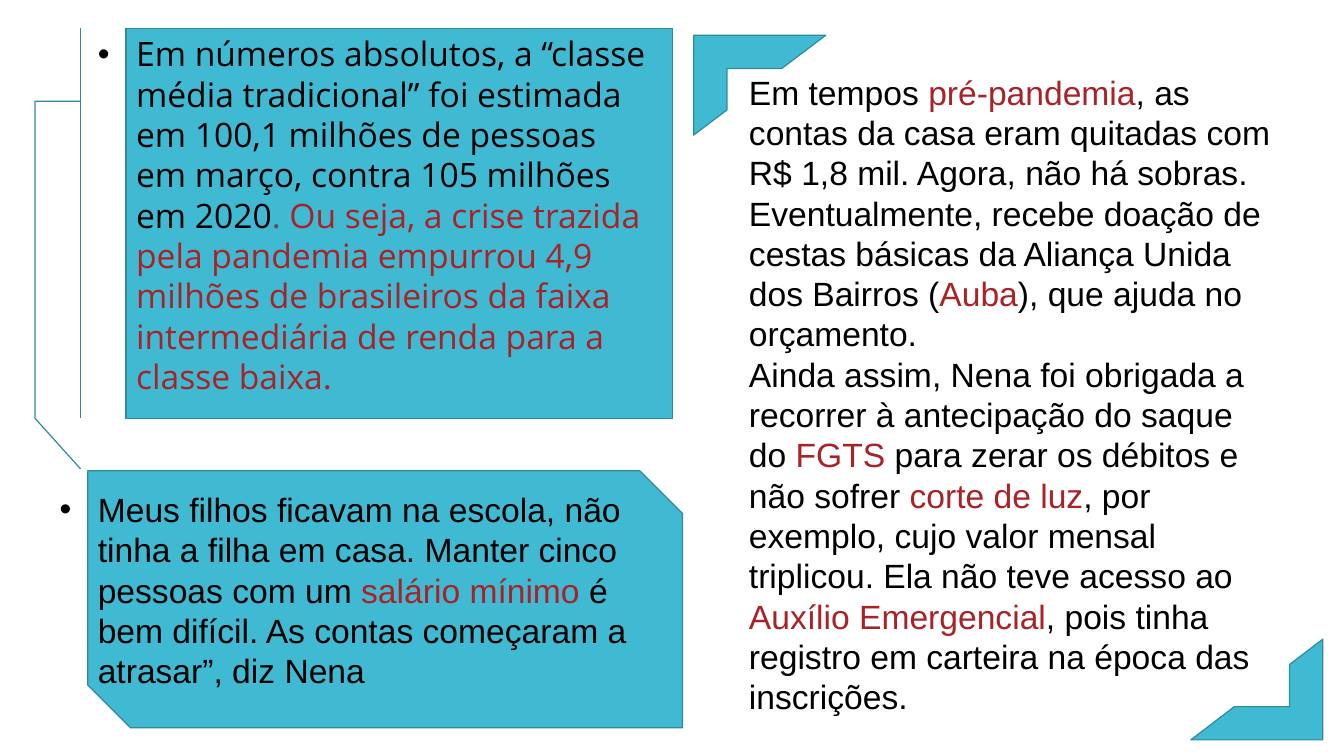
from lxml import etree
from pptx import Presentation
from pptx.dml.color import RGBColor
from pptx.enum.shapes import MSO_SHAPE
from pptx.enum.text import MSO_ANCHOR, MSO_AUTO_SIZE, PP_ALIGN
from pptx.oxml.ns import qn
from pptx.util import Inches, Pt

CALLOUT = MSO_SHAPE.LINE_CALLOUT_3_BORDER_AND_ACCENT_BAR
SNIPPED = MSO_SHAPE.SNIP_2_DIAG_RECTANGLE
HALF_FRAME = MSO_SHAPE.HALF_FRAME
TOP = MSO_ANCHOR.TOP
FIT_SHAPE = MSO_AUTO_SIZE.SHAPE_TO_FIT_TEXT
LEFT = PP_ALIGN.LEFT

TEAL, TEAL_DARK = "40BAD2", "2F8A9B"
BLACK, GRAY, RED = "000000", "555555", "A72327"
TWO_CONTENT_LAYOUT = 3
BULLET_INDENT = 0.38

MIDDLE_CLASS = [[
    ("Em números absolutos, a “classe média tradicional” foi estimada em 100,1 "
     "milhões de pessoas em março, contra 105 milhões em 2020", BLACK),
    (".", GRAY),
    (" Ou seja, a crise trazida pela pandemia empurrou 4,9 milhões de brasileiros "
     "da faixa intermediária de renda para a classe baixa.", RED),
]]
NENA_QUOTE = [[
    ("Meus filhos ficavam na escola, não tinha a filha em casa. Manter cinco "
     "pessoas com um ", BLACK),
    ("salário mínimo", RED),
    (" é bem difícil. As contas começaram a atrasar”, diz Nena", BLACK),
]]
NENA_STORY = [
    [
        ("Em tempos ", BLACK),
        ("pré-pandemia", RED),
        (", as contas da casa eram quitadas com R$ 1,8 mil. Agora, não há sobras. "
         "Eventualmente, recebe doação de cestas básicas da Aliança Unida dos "
         "Bairros (", BLACK),
        ("Auba", RED),
        ("), que ajuda no orçamento.", BLACK),
    ],
    [
        ("Ainda assim, Nena foi obrigada a recorrer à antecipação do saque do ", BLACK),
        ("FGTS", RED),
        (" para zerar os débitos e não sofrer ", BLACK),
        ("corte de luz", RED),
        (", por exemplo, cujo valor mensal triplicou. Ela não teve acesso ao ", BLACK),
        ("Auxílio Emergencial", RED),
        (", pois tinha registro em carteira na época das inscrições.", BLACK),
    ],
]


def color(hex_string):
    return RGBColor.from_string(hex_string)


def add_panel(slide, kind, left, top, width, height, rotation=0, adjustments=()):
    shape = slide.shapes.add_shape(
        kind, Inches(left), Inches(top), Inches(width), Inches(height))
    shape.shadow.inherit = False
    shape.fill.solid()
    shape.fill.fore_color.rgb = color(TEAL)
    shape.line.color.rgb = color(TEAL_DARK)
    shape.line.width = Pt(0.85)
    shape.rotation = rotation
    for index, value in enumerate(adjustments):
        shape.adjustments[index] = value


def set_bullet(paragraph):
    properties = paragraph._p.get_or_add_pPr()
    properties.set("marL", str(Inches(BULLET_INDENT)))
    properties.set("indent", str(-Inches(BULLET_INDENT)))
    etree.SubElement(properties, qn("a:buFont")).set("typeface", "Arial")
    etree.SubElement(properties, qn("a:buChar")).set("char", "•")


def write_text(shape, paragraphs, font="Arial", size=24, bullet=False):
    frame = shape.text_frame
    frame.word_wrap = True
    frame.auto_size = FIT_SHAPE
    frame.vertical_anchor = TOP
    for index, runs in enumerate(paragraphs):
        paragraph = frame.add_paragraph() if index else frame.paragraphs[0]
        paragraph.alignment = LEFT
        paragraph.space_before = Pt(0)
        if bullet:
            set_bullet(paragraph)
        for text, run_color in runs:
            run = paragraph.add_run()
            run.text = text
            run.font.name = font
            run.font.size = Pt(size)
            run.font.color.rgb = color(run_color)


def place_list(slide, placeholder, left, top, width, height, paragraphs, **text_format):
    placeholder.left, placeholder.top = Inches(left), Inches(top)
    placeholder.width, placeholder.height = Inches(width), Inches(height)
    slide.shapes._spTree.append(placeholder._element)
    write_text(placeholder, paragraphs, bullet=True, **text_format)


def add_text(slide, left, top, width, height, paragraphs, **text_format):
    box = slide.shapes.add_textbox(
        Inches(left), Inches(top), Inches(width), Inches(height))
    write_text(box, paragraphs, **text_format)


def main():
    presentation = Presentation()
    presentation.slide_width = Inches(13.33)
    presentation.slide_height = Inches(7.5)
    layout = presentation.slide_layouts[TWO_CONTENT_LAYOUT]
    slide = presentation.slides.add_slide(layout)
    title, upper_list, lower_list = list(slide.placeholders)[:3]
    title._element.getparent().remove(title._element)

    for unused in list(slide.placeholders)[2:]:
        unused._element.getparent().remove(unused._element)

    add_panel(slide, CALLOUT, 1.25, 0.28, 5.42, 3.87)
    place_list(slide, upper_list, 0.87, 0.28, 5.64, 3.74, MIDDLE_CLASS, font="Open Sans")
    add_panel(slide, SNIPPED, 0.87, 4.67, 5.9, 2.55)
    place_list(slide, lower_list, 0.49, 4.8, 6.18, 2.12, NENA_QUOTE)
    add_panel(slide, HALF_FRAME, 6.88, 0.35, 1.31, 0.99)
    add_text(slide, 7.33, 0.66, 5.42, 6.56, NENA_STORY)
    add_panel(slide, HALF_FRAME, 11.81, 6.34, 1.31, 1,
              rotation=180, adjustments=(0.33, 0.33))

    presentation.save("out.pptx")


if __name__ == "__main__":
    main()
